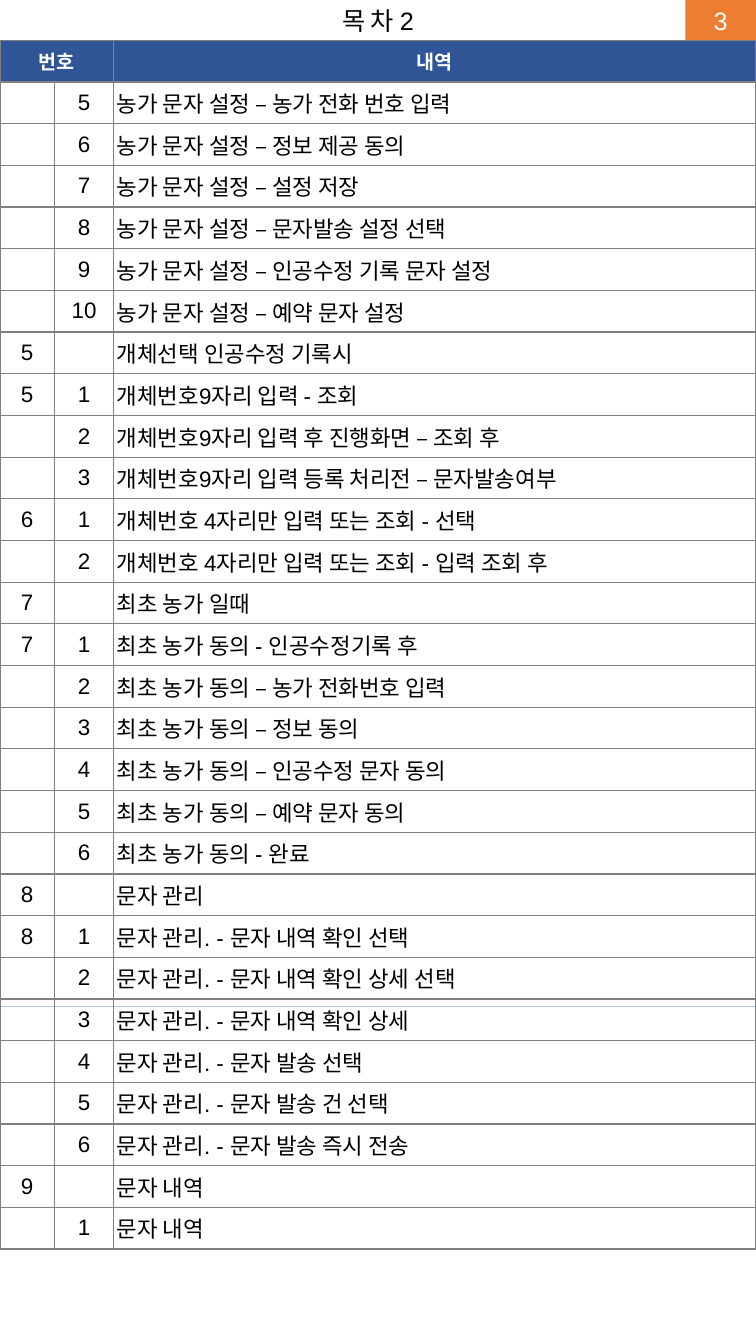
"""Build the second table-of-contents slide."""
from typing import NamedTuple

from lxml import etree
from pptx import Presentation
from pptx import util as u
from pptx.dml.color import RGBColor
from pptx.enum import shapes, text
from pptx.oxml import ns

PX = 9144
WIDTH, HEIGHT, BAND = 750, 1333, 40
TABLE_HEIGHT = 1199
COLUMNS = (54, 59, 637)
RULES = (BAND, 998)
FONT = "Arial"
BLACK, WHITE, GREY = "000000", "FFFFFF", "808080"
ORANGE, NAVY, PALE_BLUE = "ED7D31", "2F5597", "B4C7E7"
CENTER, LEFT = text.PP_ALIGN.CENTER, text.PP_ALIGN.LEFT


class Entry(NamedTuple):
    chapter: str
    step: str
    topic: str


class TextStyle(NamedTuple):
    size: int
    color: str
    bold: bool = False
    align: text.PP_ALIGN = CENTER


HEADING = TextStyle(18, BLACK)
BADGE = TextStyle(18, WHITE)
HEADER = TextStyle(14, WHITE, True)
NUMBER = TextStyle(16, BLACK)
TOPIC = TextStyle(16, BLACK, align=LEFT)

ENTRIES = (
    Entry("", "5", "농가 문자 설정 – 농가 전화 번호 입력"),
    Entry("", "6", "농가 문자 설정 – 정보 제공 동의"),
    Entry("", "7", "농가 문자 설정 – 설정 저장"),
    Entry("", "8", "농가 문자 설정 – 문자발송 설정 선택"),
    Entry("", "9", "농가 문자 설정 – 인공수정 기록 문자 설정"),
    Entry("", "10", "농가 문자 설정 – 예약 문자 설정"),
    Entry("5", "", "개체선택 인공수정 기록시"),
    Entry("5", "1", "개체번호9자리 입력 - 조회"),
    Entry("", "2", "개체번호9자리 입력 후 진행화면 – 조회 후"),
    Entry("", "3", "개체번호9자리 입력 등록 처리전 – 문자발송여부"),
    Entry("6", "1", "개체번호 4자리만 입력 또는 조회 - 선택"),
    Entry("", "2", "개체번호 4자리만 입력 또는 조회 - 입력 조회 후"),
    Entry("7", "", "최초 농가 일때"),
    Entry("7", "1", "최초 농가 동의 - 인공수정기록 후"),
    Entry("", "2", "최초 농가 동의 – 농가 전화번호 입력"),
    Entry("", "3", "최초 농가 동의 – 정보 동의"),
    Entry("", "4", "최초 농가 동의 – 인공수정 문자 동의"),
    Entry("", "5", "최초 농가 동의 – 예약 문자 동의"),
    Entry("", "6", "최초 농가 동의 - 완료"),
    Entry("8", "", "문자 관리"),
    Entry("8", "1", "문자 관리. - 문자 내역 확인 선택"),
    Entry("", "2", "문자 관리. - 문자 내역 확인 상세 선택"),
    Entry("", "3", "문자 관리. - 문자 내역 확인 상세"),
    Entry("", "4", "문자 관리. - 문자 발송 선택"),
    Entry("", "5", "문자 관리. - 문자 발송 건 선택"),
    Entry("", "6", "문자 관리. - 문자 발송 즉시 전송"),
    Entry("9", "", "문자 내역"),
    Entry("", "1", "문자 내역"),
)


def px(length: int) -> u.Emu:
    return u.Emu(length * PX)


def rgb(value: str) -> RGBColor:
    return RGBColor.from_string(value)


def write(frame, wording: str, style: TextStyle) -> None:
    para = frame.paragraphs[0]
    para.text = wording
    para.alignment = style.align
    para.font.name = FONT
    para.font.size = u.Pt(style.size)
    para.font.bold = style.bold
    para.font.color.rgb = rgb(style.color)


def add_badge(page, number: str) -> None:
    badge = page.shapes.add_shape(
        shapes.MSO_SHAPE.RECTANGLE, px(680), 0, px(70), px(BAND))
    badge.shadow.inherit = False
    badge.fill.solid()
    badge.fill.fore_color.rgb = rgb(ORANGE)
    badge.line.fill.background()
    badge.text_frame.vertical_anchor = text.MSO_ANCHOR.MIDDLE
    write(badge.text_frame, number, BADGE)


def add_rule(page, top: int) -> None:
    rule = page.shapes.add_connector(
        shapes.MSO_CONNECTOR.STRAIGHT, 0, px(top), px(WIDTH), px(top))
    rule.line.color.rgb = rgb(PALE_BLUE)
    rule.line.width = u.Pt(0.5)
    etree.SubElement(rule._element.spPr, ns.qn("a:effectLst"))


def set_title(page, wording: str) -> None:
    title = page.shapes.title
    title.left, title.top = px(0), px(0)
    title.width, title.height = px(WIDTH), px(BAND)
    title.text_frame.auto_size = text.MSO_AUTO_SIZE.NONE
    title.text_frame.vertical_anchor = text.MSO_ANCHOR.MIDDLE
    write(title.text_frame, wording, HEADING)


def add_borders(cell) -> None:
    properties = cell._tc.get_or_add_tcPr()
    for side in ("lnL", "lnR", "lnT", "lnB"):
        line = etree.SubElement(properties, ns.qn(f"a:{side}"), w=str(u.Pt(1)))
        fill = etree.SubElement(line, ns.qn("a:solidFill"))
        etree.SubElement(fill, ns.qn("a:srgbClr"), val=GREY)


def fill_row(cells, wordings: Entry, styles: tuple[TextStyle, ...]) -> None:
    for cell, wording, style in zip(cells, wordings, styles):
        add_borders(cell)
        cell.vertical_anchor = text.MSO_ANCHOR.MIDDLE
        cell.margin_left = cell.margin_right = px(3)
        cell.margin_top = cell.margin_bottom = px(2)
        if style is HEADER:
            cell.fill.solid()
            cell.fill.fore_color.rgb = rgb(NAVY)
        else:
            cell.fill.background()
        write(cell.text_frame, wording, style)


def add_contents(page) -> None:
    table = page.shapes.add_table(
        len(ENTRIES) + 1, len(COLUMNS), 0, px(BAND), px(WIDTH), px(TABLE_HEIGHT)).table
    table.first_row = table.horz_banding = False
    for column, width in zip(table.columns, COLUMNS):
        column.width = px(width)
    header, *body = table.rows
    fill_row(header.cells, Entry("번호", "", "내역"), (HEADER,) * 3)
    table.cell(0, 0).merge(table.cell(0, 1))
    for row, entry in zip(body, ENTRIES):
        fill_row(row.cells, entry, (NUMBER, NUMBER, TOPIC))


def main() -> None:
    deck = Presentation()
    deck.slide_width, deck.slide_height = px(WIDTH), px(HEIGHT)
    page = deck.slides.add_slide(deck.slide_layouts[5])
    set_title(page, "목 차 2")
    add_badge(page, "3")
    for top in RULES:
        add_rule(page, top)
    add_contents(page)
    deck.save("out.pptx")


if __name__ == "__main__":
    main()
